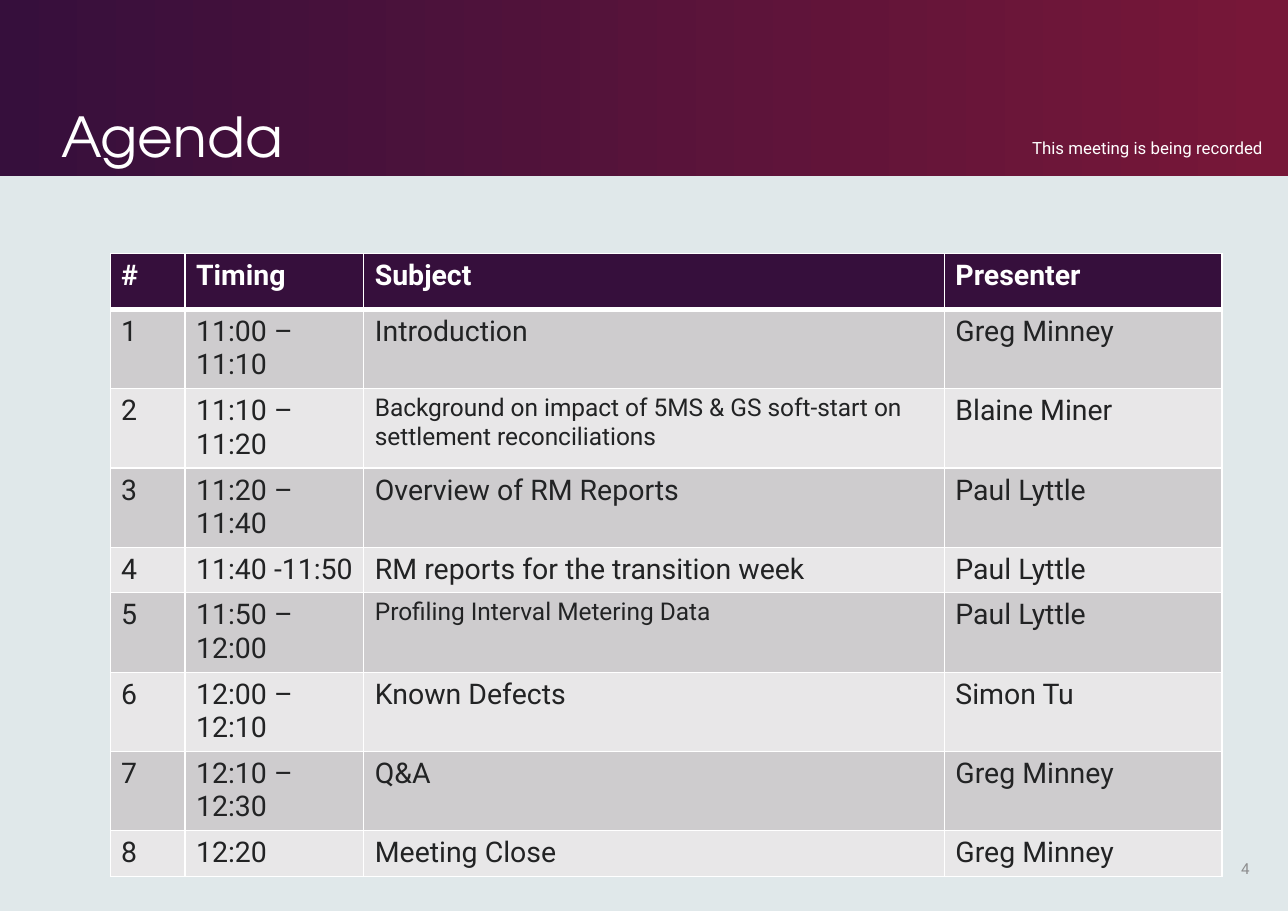
from pptx import Presentation
from pptx.dml.color import RGBColor
from pptx.enum.shapes import MSO_SHAPE
from pptx.enum.text import MSO_ANCHOR, PP_ALIGN
from pptx.oxml import parse_xml
from pptx.oxml.ns import nsdecls
from pptx.util import Pt

# Content
HEADER = ("#", "Timing", "Subject", "Presenter")
AGENDA = [
    ("11:00 – 11:10", "Introduction", "Greg Minney"),
    ("11:10 – 11:20", "Background on impact of 5MS & GS soft-start on settlement reconciliations",
     "Blaine Miner"),
    ("11:20 – 11:40", "Overview of RM Reports", "Paul Lyttle"),
    ("11:40 -11:50", "RM reports for the transition week", "Paul Lyttle"),
    ("11:50 – 12:00", "Profiling Interval Metering Data", "Paul Lyttle"),
    ("12:00 – 12:10", "Known Defects", "Simon Tu"),
    ("12:10 – 12:30", "Q&A", "Greg Minney"),
    ("12:20", "Meeting Close", "Greg Minney"),
]
SMALL_SUBJECTS = {2, 5}
SUBJECT_COLUMN = 2

# Format
COLORS = {"page": "E0E8EA", "plum": "360F3C", "wine": "771738", "white": "FFFFFF",
          "ink": "222324", "grey": "8D8D8E", "dark band": "CECCCE", "light band": "E8E7E8"}
BODY_FONT, TITLE_FONT = "Roboto", "TeX Gyre Adventor"
PAGE_WIDTH, PAGE_HEIGHT, BANNER_HEIGHT = 841.68, 595.44, 115.2
TABLE_LEFT, TABLE_TOP = 72, 165.6
COLUMN_WIDTHS = (49, 116.8, 379.4, 181.4)
HEADER_HEIGHT, ROW_HEIGHT = 36.7, 29.7
TEXT_SIZE, SMALL_SIZE = 18.6, 16
THIN, THICK = 1, 3

# (text, frame, anchor, paragraph format, size, font, colour)
LABELS = [
    ("Agenda", (33.12, 11.52, 726.5, 103), MSO_ANCHOR.BOTTOM,
     {"line_spacing": 0.9}, 36, TITLE_FONT, "white"),
    ("4", (784.1, 551.5, 39.6, 31.7), MSO_ANCHOR.MIDDLE,
     {"alignment": PP_ALIGN.RIGHT}, 9.9, BODY_FONT, "grey"),
    ("This meeting is being recorded", (667.4, 87.8, 185, 19.4), MSO_ANCHOR.MIDDLE,
     {"line_spacing": 0.9}, 11, BODY_FONT, "white"),
]


def color(name):
    return RGBColor.from_string(COLORS[name])


def write(frame, text, size, font, color_name, bold=False):
    para = frame.paragraphs[0]
    span = para.add_run()
    span.text = text
    for key, value in {"size": Pt(size), "name": font, "bold": bold}.items():
        setattr(span.font, key, value)
    span.font.color.rgb = color(color_name)
    return para


def add_borders(cell, widths):
    properties = cell._tc.get_or_add_tcPr()
    for side, width in widths.items():
        properties.append(parse_xml(
            f'<a:ln{side} {nsdecls("a")} w="{Pt(width)}"><a:solidFill>'
            f'<a:srgbClr val="{COLORS["white"]}"/></a:solidFill></a:ln{side}>'))


def add_banner(page):
    banner = page.shapes.add_shape(MSO_SHAPE.RECTANGLE, 0, 0, Pt(PAGE_WIDTH), Pt(BANNER_HEIGHT))
    banner.shadow.inherit = False
    banner.line.fill.background()
    banner.fill.gradient()
    banner.fill.gradient_angle = 0
    for stop, position, name in zip(banner.fill.gradient_stops, (0, 0.99), ("plum", "wine")):
        stop.position = position
        stop.color.rgb = color(name)


def add_label(page, text, frame, anchor, paragraph_format, size, font, color_name):
    box = page.shapes.add_textbox(*map(Pt, frame)).text_frame
    box.word_wrap = True
    box.vertical_anchor = anchor
    para = write(box, text, size, font, color_name)
    for key, value in paragraph_format.items():
        setattr(para, key, value)


def add_agenda(page):
    rows = [HEADER] + [(str(number), *item) for number, item in enumerate(AGENDA, 1)]
    heights = [HEADER_HEIGHT] + [ROW_HEIGHT] * len(AGENDA)
    table = page.shapes.add_table(len(rows), len(HEADER), Pt(TABLE_LEFT), Pt(TABLE_TOP),
                                  Pt(sum(COLUMN_WIDTHS)), Pt(sum(heights))).table
    for column, width in zip(table.columns, COLUMN_WIDTHS):
        column.width = Pt(width)
    for r, (texts, height) in enumerate(zip(rows, heights)):
        table.rows[r].height = Pt(height)
        is_header = r == 0
        band = "plum" if is_header else "dark band" if r % 2 else "light band"
        borders = {"L": THIN, "R": THIN, "T": THICK if r == 1 else THIN,
                   "B": THICK if is_header else THIN}
        for c, text in enumerate(texts):
            cell = table.cell(r, c)
            add_borders(cell, borders)
            cell.fill.solid()
            cell.fill.fore_color.rgb = color(band)
            small = c == SUBJECT_COLUMN and r in SMALL_SUBJECTS
            write(cell.text_frame, text, SMALL_SIZE if small else TEXT_SIZE, BODY_FONT,
                  "white" if is_header else "ink", is_header)


def main():
    deck = Presentation()
    deck.slide_width, deck.slide_height = Pt(PAGE_WIDTH), Pt(PAGE_HEIGHT)
    page = deck.slides.add_slide(deck.slide_layouts[6])
    page.background.fill.solid()
    page.background.fill.fore_color.rgb = color("page")
    add_banner(page)
    for label in LABELS:
        add_label(page, *label)
    add_agenda(page)
    deck.save("out.pptx")


if __name__ == "__main__":
    main()
